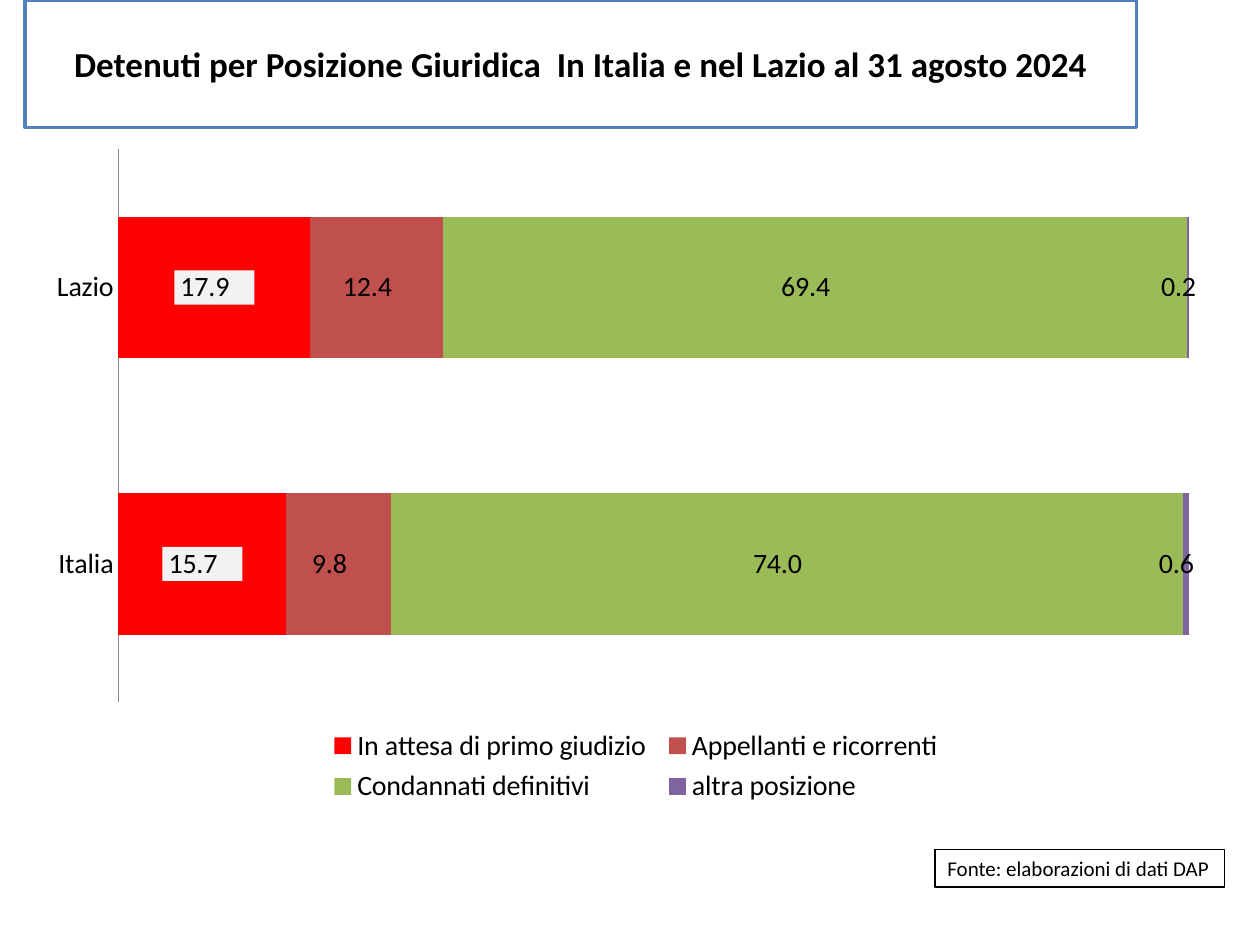
"""Build a slide comparing the legal position of prisoners in Lazio and Italy."""
import lxml.etree
import pptx
import pptx.chart.data
import pptx.dml.color
import pptx.enum.chart
import pptx.enum.shapes
import pptx.enum.text
import pptx.oxml
import pptx.oxml.ns
import pptx.util

Cm, Pt, qn = pptx.util.Cm, pptx.util.Pt, pptx.oxml.ns.qn
ALIGN = pptx.enum.text.PP_ALIGN

REGIONS = ["Lazio", "Italia"]
POSITIONS = [
    ("In attesa di primo giudizio", (17.9, 15.7), "FF0000"),
    ("Appellanti e ricorrenti", (12.4, 9.8), "C0504D"),
    ("Condannati definitivi", (69.4, 74.0), "9BBB59"),
    ("altra posizione", (0.2, 0.6), "8064A2"),
]
NUMBER_FORMAT = '_-* #,##0.0\\ _€_-;\\-* #,##0.0\\ _€_-;_-* "-"??\\ _€_-;_-@_-'
PANELS = [
    {"text": "Detenuti per Posizione Giuridica  In Italia e nel Lazio al 31 agosto 2024",
     "at": (0.51, 0, 22.4, 2.57), "border": ("4F81BD", 2), "align": ALIGN.CENTER,
     "wrap": True, "font": {"size": Pt(20), "bold": True}},
    {"text": "Fonte: elaborazioni di dati DAP",
     "at": (18.85, 17.12, 5.84, 0.76), "border": ("000000", 0.75), "align": ALIGN.LEFT,
     "wrap": False, "font": {"size": Pt(12), "bold": False}},
]
CHART_AT = (0.71, 2.74, 23.98, 13.59)
PLOT_AREA = (0.07, 0.02, 0.9, 0.82)
LEGEND_AREA = (0.24, 0.87, 0.53, 0.13)


def color(value):
    return pptx.dml.color.RGBColor.from_string(value)


def apply(target, values):
    for name, value in values.items():
        setattr(target, name, value)


def style_font(font, values):
    apply(font, {"name": "Calibri", **values})
    font.color.rgb = color("000000")


def fill(part, value):
    part.fill.solid()
    part.fill.fore_color.rgb = color(value)


def add_panel(slide, panel):
    box = slide.shapes.add_shape(
        pptx.enum.shapes.MSO_SHAPE.RECTANGLE, *map(Cm, panel["at"]))
    box.shadow.inherit = False
    fill(box, "FFFFFF")
    border, width = panel["border"]
    box.line.color.rgb = color(border)
    box.line.width = Pt(width)
    apply(box.text_frame, {"text": panel["text"], "word_wrap": panel["wrap"],
                           "vertical_anchor": pptx.enum.text.MSO_ANCHOR.MIDDLE})
    paragraph = box.text_frame.paragraphs[0]
    paragraph.alignment = panel["align"]
    style_font(paragraph.runs[0].font, panel["font"])


def set_layout(parent, index, area, inner=False):
    for existing in parent.findall(qn("c:layout")):
        parent.remove(existing)
    layout = lxml.etree.Element(qn("c:layout"))
    manual = lxml.etree.SubElement(layout, qn("c:manualLayout"))
    settings = [("layoutTarget", "inner")] if inner else []
    settings += [("xMode", "edge"), ("yMode", "edge"), *zip("xywh", area)]
    for tag, value in settings:
        lxml.etree.SubElement(manual, qn(f"c:{tag}")).set("val", str(value))
    parent.insert(index, layout)


def add_label_background(labels, value):
    background = pptx.oxml.parse_xml(
        f'<c:spPr {pptx.oxml.ns.nsdecls("c", "a")}><a:solidFill>'
        f'<a:srgbClr val="{value}"/></a:solidFill></c:spPr>')
    labels._element.find(qn("c:numFmt")).addnext(background)


def add_positions_chart(slide):
    data = pptx.chart.data.CategoryChartData(number_format="0.0")
    data.categories = REGIONS
    for name, shares, _ in POSITIONS:
        data.add_series(name, shares)
    chart = slide.shapes.add_chart(
        pptx.enum.chart.XL_CHART_TYPE.BAR_STACKED_100, *map(Cm, CHART_AT), data).chart
    apply(chart, {"has_title": False, "has_legend": True})
    style_font(chart.font, {"size": Pt(16)})
    apply(chart.legend, {"position": pptx.enum.chart.XL_LEGEND_POSITION.BOTTOM,
                         "include_in_layout": False})
    apply(chart.value_axis, {"visible": False, "has_major_gridlines": False})
    apply(chart.category_axis, {
        "reverse_order": True, "has_major_gridlines": False,
        "major_tick_mark": pptx.enum.chart.XL_TICK_MARK.NONE})
    chart.category_axis.format.line.color.rgb = color("868686")

    plot = chart.plots[0]
    apply(plot, {"gap_width": 95, "overlap": 100, "vary_by_categories": False})
    for series, (_, _, shade) in zip(plot.series, POSITIONS):
        fill(series.format, shade)
        labels = series.data_labels
        apply(labels, {"show_value": True, "number_format": NUMBER_FORMAT,
                       "number_format_is_linked": False})
        style_font(labels.font, {"size": Pt(16)})
    add_label_background(plot.series[0].data_labels, "F2F2F2")

    set_layout(chart._chartSpace.chart.plotArea, 0, PLOT_AREA, inner=True)
    set_layout(chart.legend._element, 1, LEGEND_AREA)


def main():
    deck = pptx.Presentation()
    apply(deck, {"slide_width": Cm(25.4), "slide_height": Cm(19.05)})
    slide = deck.slides.add_slide(deck.slide_layouts[6])
    for panel in PANELS:
        add_panel(slide, panel)
    add_positions_chart(slide)
    deck.save("out.pptx")


if __name__ == "__main__":
    main()
